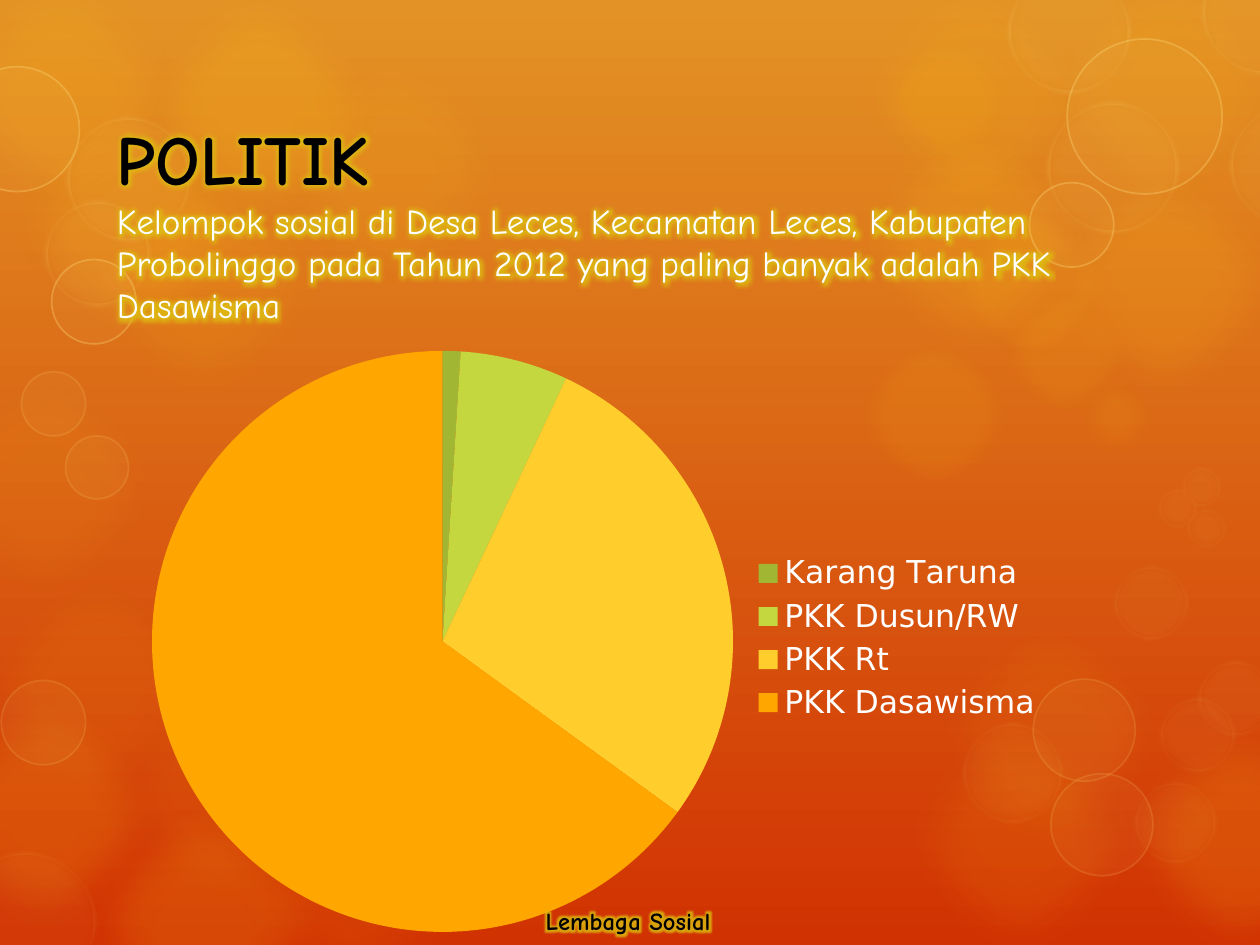
"""Build the POLITIK slide: a bubble backdrop, a heading and a pie of social groups."""
from lxml import etree
from pptx import Presentation
from pptx.chart.data import CategoryChartData
from pptx.dml.color import RGBColor
from pptx.enum.chart import XL_CHART_TYPE, XL_LEGEND_POSITION
from pptx.enum.shapes import MSO_SHAPE
from pptx.enum.text import MSO_ANCHOR, PP_ALIGN
from pptx.oxml import parse_xml
from pptx.oxml.ns import nsdecls, qn
from pptx.util import Inches, Pt

PIE, RIGHT = XL_CHART_TYPE.PIE, XL_LEGEND_POSITION.RIGHT
OVAL = MSO_SHAPE.OVAL
BOTTOM, TOP = MSO_ANCHOR.BOTTOM, MSO_ANCHOR.TOP
LEFT, CENTER = PP_ALIGN.LEFT, PP_ALIGN.CENTER
rgb = RGBColor.from_string

deck = Presentation()
deck.slide_width, deck.slide_height = Inches(10), Inches(7.5)
slide = deck.slides.add_slide(deck.slide_layouts[6])

back = slide.background.fill
back.gradient()
back.gradient_angle = 270
for stop, hue in zip(back.gradient_stops, ("E39325", "D13202")):
    stop.color.rgb = rgb(hue)

GOLD, PALE = "FDC61B", "FFE281"
BIG = 2.09
groups = [
    (GOLD, 8, 0, 0, 0.3, [(-0.26, 4.42, BIG), (0.77, 5.24, BIG), (1.73, 5.96, BIG),
                          (-0.7, 2.82, BIG), (7.29, 4.77, BIG)]),
    (GOLD, 10, 0, 0, 0.3, [(0.57, 1.2, BIG), (2.05, 0.31, BIG), (6.69, -0.29, BIG),
                           (7.06, 5.62, BIG), (8.2, -0.32, BIG)]),
    (GOLD, 15, 0, 0, 0.3, [(-0.56, -0.32, BIG), (0, 0.72, BIG), (8.2, 1.2, BIG),
                           (6.69, 0.86, BIG), (0.57, 6.27, BIG), (8.81, 5.62, BIG),
                           (-0.69, 5.41, BIG)]),
    (GOLD, 20, 0, 0, 0.3, [(1.01, -0.18, BIG)]),
    (GOLD, 10, 0, 0, 0.15, [(6.75, 2.62, 1.33), (6.94, 0.23, 1.14), (7.52, 1.59, 1.33),
                            (7.89, 2.24, 1.14), (8.47, 2.91, 0.79)]),
    (PALE, 5, 5, 15, 0.06, [(-0.36, 6.75, 1.13), (7.63, 5.73, 0.81), (9, 6.2, 0.66),
                            (8.83, 4.48, 0.61), (9.2, 5.53, 0.61), (9.5, 5.24, 0.61),
                            (9.37, 3.7, 0.33), (9.18, 3.87, 0.33), (9.41, 4.03, 0.33)]),
    (PALE, 5, 5, 30, 0.06, [(0.52, 0.92, 1), (0.35, 1.59, 0.85), (7.99, -0.24, 0.99),
                            (9.53, -0.4, 1), (9.75, 0.82, 0.99), (8.3, 0.8, 1.06)]),
    (PALE, 5, 1, 15, 0, [(0.01, 5.4, 0.67), (8.34, 6.14, 0.81), (8.2, 5.39, 0.81),
                         (0.17, 2.95, 0.51), (0.52, 3.46, 0.5)]),
    (PALE, 5, 1, 30, 0, [(-0.36, 0.53, 0.99), (0.41, 2.06, 0.67), (8.47, 0.31, 1.23),
                         (8.17, 1.45, 0.67)]),
]
for hue, fade, wide, dim, soft, spots in groups:
    for x, y, size in spots:
        disc = slide.shapes.add_shape(OVAL, *map(Inches, (x, y, size, size)))
        disc.shadow.inherit = False
        disc.fill.solid()
        disc.fill.fore_color.rgb = rgb(hue)
        if wide:
            disc.line.color.rgb = rgb(hue)
            disc.line.width = Pt(wide)
        else:
            disc.line.fill.background()
        props = disc._element.spPr
        for tint, share in zip(props.iter(qn("a:srgbClr")), (fade, dim)):
            etree.SubElement(tint, qn("a:alpha"), val=str(share * 1000))
        if soft:
            edge = etree.SubElement(props.find(qn("a:effectLst")), qn("a:softEdge"))
            edge.set("rad", str(Inches(soft)))


def write(box, anchor, base, align, lines):
    """Put glowing lines of text into a new box."""
    frame = slide.shapes.add_textbox(*map(Inches, box)).text_frame
    frame.word_wrap = True
    frame.vertical_anchor = anchor
    frame.margin_bottom = Inches(base)
    for i, (text, size, hue, bold) in enumerate(lines):
        para = frame.add_paragraph() if i else frame.paragraphs[0]
        para.alignment = align
        font = para.font
        font.name, font.size, font.bold = "Comic Neue", Pt(size), bold
        font.color.rgb = rgb(hue)
        run = para.add_run()
        run.text = text
        run._r.get_or_add_rPr().append(parse_xml(
            f'<a:effectLst {nsdecls("a")}><a:glow rad="101600"><a:srgbClr val="DDC010">'
            '<a:alpha val="80000"/></a:srgbClr></a:glow></a:effectLst>'))


write((0.83, 1.07, 8.5, 1.89), BOTTOM, 0.38, LEFT, [
    ("POLITIK", 40, "000000", True),
    ("Kelompok sosial di Desa Leces, Kecamatan Leces, Kabupaten Probolinggo "
     "pada Tahun 2012 yang paling banyak adalah PKK Dasawisma", 20, "FFFFFF", False)])

data = CategoryChartData()
data.categories = ["Karang Taruna", "PKK Dusun/RW", "PKK Rt", "PKK Dasawisma"]
data.add_series("Series 1", (1, 6, 28, 65))
chart = slide.shapes.add_chart(PIE, *map(Inches, (1.06, 2.41, 7.32, 5.31)), data).chart
chart.has_title = False
chart.font.name, chart.font.size = "DejaVu Sans", Pt(18)
chart.font.color.rgb = rgb("FFFFFF")
chart.has_legend = True
chart.legend.position = RIGHT
chart.legend.include_in_layout = False
for i, hue in enumerate(("A1B633", "C4D73F", "FFCE2D", "FFA600")):
    fill = chart.plots[0].series[0].points[i].format.fill
    fill.solid()
    fill.fore_color.rgb = rgb(hue)
area = chart._chartSpace.chart.plotArea
for old in area.findall(qn("c:layout")):
    area.remove(old)
area.insert(0, parse_xml(
    f'<c:layout {nsdecls("c")}><c:manualLayout><c:layoutTarget val="inner"/>'
    '<c:xMode val="edge"/><c:yMode val="edge"/><c:x val="0.02"/><c:y val="0.07"/>'
    '<c:w val="0.63"/><c:h val="0.87"/></c:manualLayout></c:layout>'))

write((1.77, 7.14, 6.43, 0.34), TOP, 0.05, CENTER,
      [("Lembaga Sosial", 14, "000000", True)])
deck.save("out.pptx")
